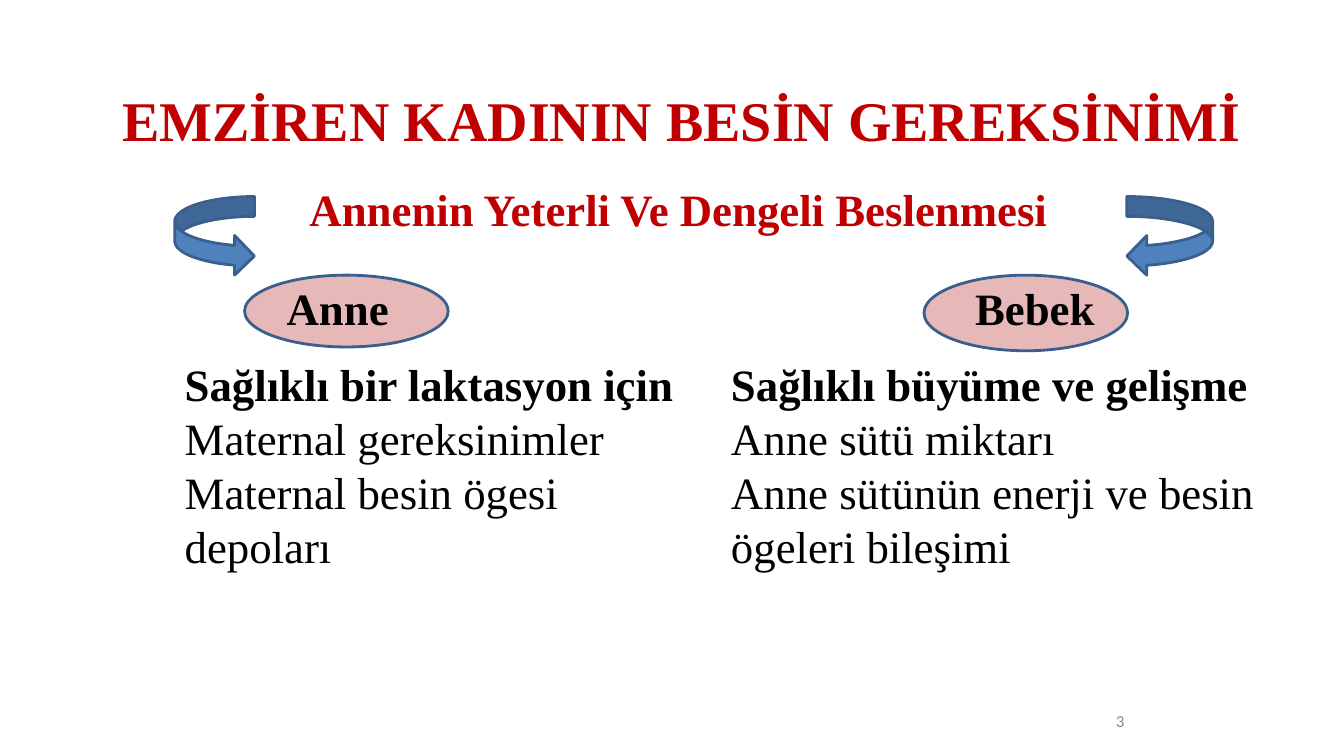
from pptx import Presentation
from pptx.dml.color import RGBColor
from pptx.enum.shapes import MSO_SHAPE
from pptx.enum.text import MSO_ANCHOR, PP_ALIGN
from pptx.util import Inches, Pt

WIDE, HIGH = Inches(13.33), Inches(7.5)
COLORS = {"red": "C00000", "black": "000000", "gray": "898989",
          "pink": "E6B9B8", "blue": "4F81BD", "edge": "3A5F8C"}
SERIF = "Times New Roman"


def place(box):
    """Turn a box in percent of the slide into slide lengths."""
    x, y, w, h = box
    return (int(WIDE * x / 100), int(HIGH * y / 100),
            int(WIDE * w / 100), int(HIGH * h / 100))


def paint(slide, kind, box, fill):
    """Add an outlined preset shape."""
    shape = slide.shapes.add_shape(kind, *place(box))
    shape.shadow.inherit = False
    shape.fill.solid()
    shape.fill.fore_color.rgb = RGBColor.from_string(COLORS[fill])
    shape.line.color.rgb = RGBColor.from_string(COLORS["edge"])
    shape.line.width = Pt(2)


def write(slide, box, lines, size=32, color="black", font=SERIF, bold=True,
          align=PP_ALIGN.CENTER, anchor=MSO_ANCHOR.MIDDLE):
    """Add text whose first line may be bold, and return its frame."""
    frame = slide.shapes.add_textbox(*place(box)).text_frame
    frame.word_wrap = True
    frame.vertical_anchor = anchor
    frame.text = "\n".join(lines)
    for i, para in enumerate(frame.paragraphs):
        para.alignment = align
        face = para.runs[0].font
        face.name, face.size = font, Pt(size)
        face.bold = bold and i == 0
        face.color.rgb = RGBColor.from_string(COLORS[color])
    return frame


def head(slide, box):
    """Place the title and the line below it."""
    x, y, w, h = box
    title = write(slide, (x, y, w, 12.4),
                  ["EMZİREN KADININ BESİN GEREKSİNİMİ"], 40, "red")
    title.margin_bottom = Inches(0.66)
    lead = write(slide, (x + 1.3, y + 5.6, w - 3, h - 5.6),
                 ["Annenin Yeterli Ve Dengeli Beslenmesi"], color="red",
                 anchor=MSO_ANCHOR.TOP)
    lead.margin_top = Inches(0.1)
    lead.paragraphs[0].line_spacing = 1.5


def side(slide, box, arrow, oval, label, name, lines):
    """Place a curved arrow, a named oval and the needs below."""
    x, y, w, h = box
    kind, shift, width = arrow
    paint(slide, MSO_SHAPE.OVAL, (x + oval[0], y + 10.4, 15.15, oval[1]), "pink")
    paint(slide, kind, (x + shift, y, width, 10.5), "blue")
    write(slide, (x + label[0], y + 10.4, label[1], 8.5), [name])
    write(slide, (x, y + 20.4, w, h - 20.4), lines, align=PP_ALIGN.LEFT)


def main():
    """Build and save the slide."""
    deck = Presentation()
    deck.slide_width, deck.slide_height = WIDE, HIGH
    slide = deck.slides.add_slide(deck.slide_layouts[6])
    head(slide, (6.4, 13.6, 88.6, 71.5))
    side(slide, (13, 26, 40.65, 50.5),
         (MSO_SHAPE.CURVED_RIGHT_ARROW, 0, 5.93), (5.2, 9.5), (2.9, 18.45),
         "Anne", ["Sağlıklı bir laktasyon için", "Maternal gereksinimler",
                  "Maternal besin ögesi depoları"])
    side(slide, (53.65, 26, 42.35, 50.5),
         (MSO_SHAPE.CURVED_LEFT_ARROW, 30.2, 6.38), (15.1, 10), (15.8, 15.1),
         "Bebek", ["Sağlıklı büyüme ve gelişme", "Anne sütü miktarı",
                   "Anne sütünün enerji ve besin ögeleri bileşimi"])
    write(slide, (71.7, 92.7, 23.3, 5.3), ["3"], 12, "gray", "Calibri", False)
    deck.save("out.pptx")


if __name__ == "__main__":
    main()
